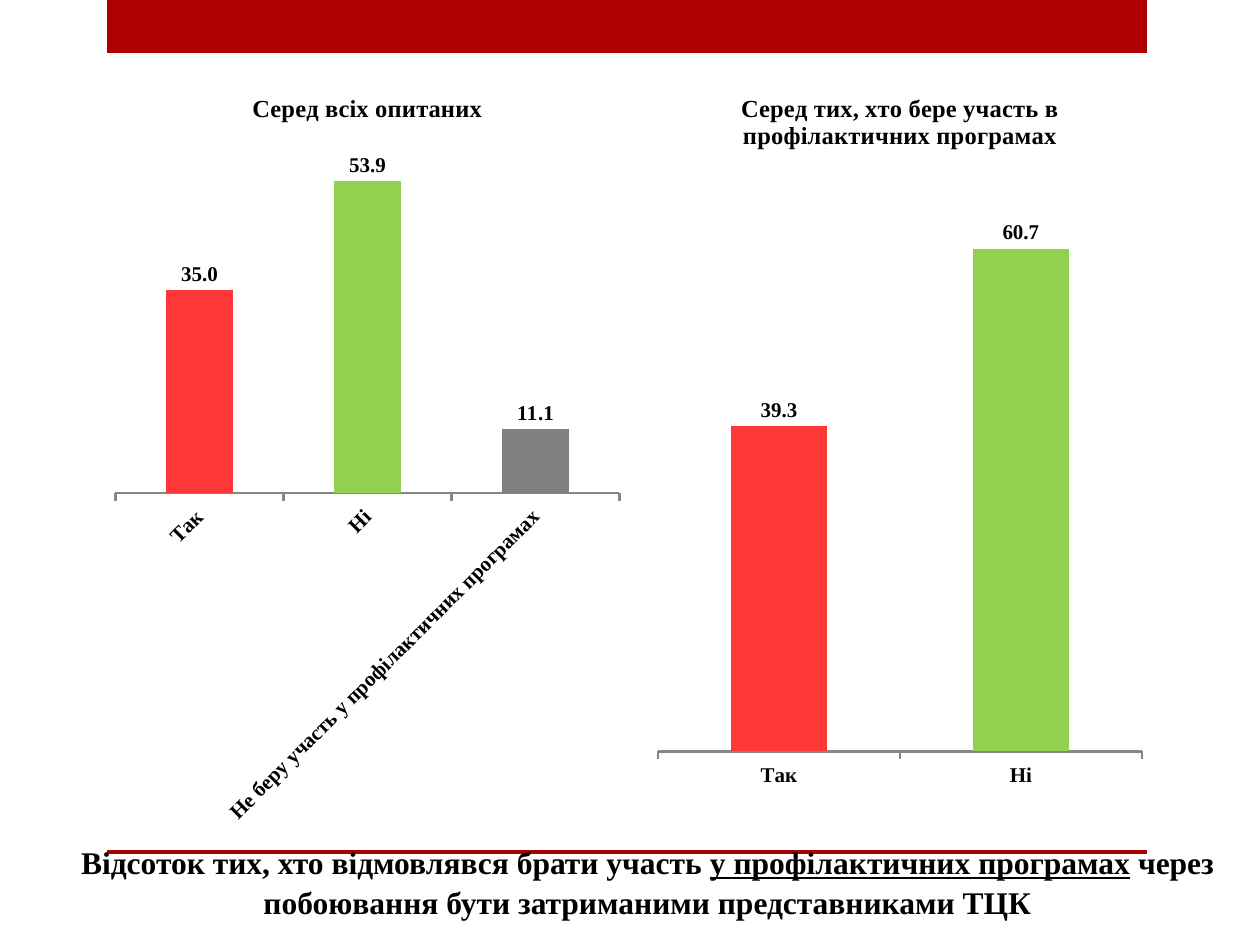
import pptx
import pptx.util
import pptx.dml.color
import pptx.chart.data
import pptx.enum.chart
import pptx.enum.shapes
import pptx.enum.text

FONT = "Times New Roman"
HUES = {"bar": "AD0101", "yes": "FE3737", "no": "92D050", "none": "808080",
        "text": "000000", "axis": "868686"}
BANDS = [(107, 0, 1040, 53), (107, 850, 1040, 4)]
HEAD = [("Відсоток тих, хто відмовлявся брати участь ", False),
        ("у профілактичних програмах", True),
        (" через побоювання бути затриманими представниками ТЦК", False)]
CHARTS = [
    {"box": (105, 66, 525, 773), "title": "Серед всіх опитаних",
     "format": "###0.0", "top": 60, "turn": -45,
     "bars": [("Так", 35.0, "yes"), ("Ні", 53.9, "no"),
              ("Не беру участь у профілактичних програмах", 11.1, "none")]},
    {"box": (648, 66, 504, 735),
     "title": "Серед тих, хто бере участь в профілактичних програмах",
     "format": "0.0", "top": 70, "turn": 0,
     "bars": [("Так", 39.3, "yes"), ("Ні", 60.7, "no")]},
]


def px(n):
    return pptx.util.Emu(round(n * 914400 / 126))


def hue(name):
    return pptx.dml.color.RGBColor.from_string(HUES[name])


def style(font, size):
    font.name = FONT
    font.size = pptx.util.Pt(size)
    font.bold = True
    font.color.rgb = hue("text")


def write(para, text, size=14, under=False):
    run = para.add_run()
    run.text = text
    style(run.font, size)
    run.font.underline = under


def paint(fill, name):
    fill.solid()
    fill.fore_color.rgb = hue(name)


def plot(slide, item):
    data = pptx.chart.data.CategoryChartData(number_format=item["format"])
    data.categories = [name for name, _, _ in item["bars"]]
    data.add_series("Series 1", [value for _, value, _ in item["bars"]])
    kind = pptx.enum.chart.XL_CHART_TYPE.COLUMN_CLUSTERED
    chart = slide.shapes.add_chart(kind, *map(px, item["box"]), data).chart
    style(chart.font, 12)
    chart.has_legend = False
    chart.has_title = True
    chart.chart_title.include_in_layout = False
    write(chart.chart_title.text_frame.paragraphs[0], item["title"])

    side = chart.value_axis
    side.visible = False
    side.has_major_gridlines = False
    side.minimum_scale, side.maximum_scale = 0, item["top"]

    base = chart.category_axis
    base.major_tick_mark = pptx.enum.chart.XL_TICK_MARK.OUTSIDE
    base.format.line.color.rgb = hue("axis")
    base.format.line.width = pptx.util.Pt(1.5)
    style(base.tick_labels.font, 12)
    turn = base._element.txPr.find(pptx.oxml.ns.qn("a:bodyPr"))
    turn.set("rot", str(item["turn"] * 60000))

    bars = chart.plots[0]
    bars.gap_width = 150
    bars.vary_by_categories = False
    bars.has_data_labels = True
    tags = bars.data_labels
    tags.show_value = True
    tags.number_format = item["format"]
    tags.number_format_is_linked = False
    tags.position = pptx.enum.chart.XL_LABEL_POSITION.OUTSIDE_END
    style(tags.font, 12)
    row = bars.series[0]
    paint(row.format.fill, "bar")
    for i, (_, _, name) in enumerate(item["bars"]):
        paint(row.points[i].format.fill, name)


def main():
    deck = pptx.Presentation()
    deck.slide_width, deck.slide_height = px(1260), px(945)
    slide = deck.slides.add_slide(deck.slide_layouts[5])

    for box in BANDS:
        band = slide.shapes.add_shape(
            pptx.enum.shapes.MSO_SHAPE.RECTANGLE, *map(px, box))
        band.shadow.inherit = False
        paint(band.fill, "bar")
        band.line.fill.background()

    title = slide.shapes.title
    title.left, title.top, title.width, title.height = map(px, (35, 839, 1225, 88))
    frame = title.text_frame
    frame.word_wrap = True
    frame.auto_size = pptx.enum.text.MSO_AUTO_SIZE.NONE
    frame.vertical_anchor = pptx.enum.text.MSO_ANCHOR.BOTTOM
    para = frame.paragraphs[0]
    para.alignment = pptx.enum.text.PP_ALIGN.CENTER
    para.line_spacing = 1.05
    for text, under in HEAD:
        write(para, text, size=18, under=under)
    title._element.getparent().append(title._element)

    for item in CHARTS:
        plot(slide, item)
    deck.save("out.pptx")


if __name__ == "__main__":
    main()
